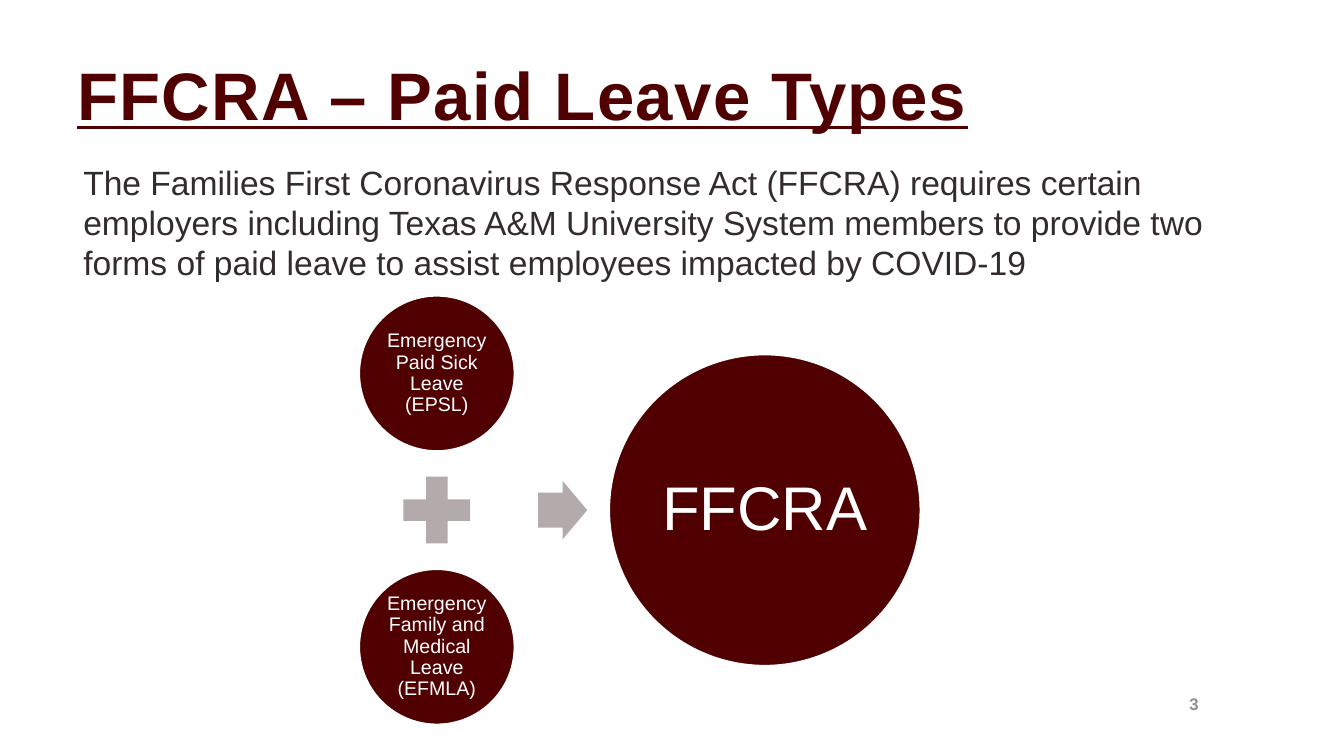
from dataclasses import dataclass

from pptx import Presentation
from pptx.dml.color import RGBColor
from pptx.enum.shapes import MSO_SHAPE as Shape
from pptx.enum.text import MSO_ANCHOR as Anchor, PP_ALIGN as Align
from pptx.util import Cm, Pt


@dataclass(frozen=True)
class Theme:
    font: str = "Arial"
    maroon: str = "500000"
    ink: str = "332C2C"
    sign: str = "B3ABAB"
    muted: str = "908F8F"
    white: str = "FFFFFF"
    title: int = 48
    body: int = 24
    total: int = 44
    leave: int = 14
    number: int = 12


THEME = Theme()


def write(tf, text, size, color, bold=False, underline=False, align=Align.LEFT,
          anchor=Anchor.TOP, line=None, spacing=0, indent=0.0, inset=(0.25, 0.13)):
    """Fill a text frame with one formatted paragraph; indent and inset are in cm."""
    tf.word_wrap = True
    tf.vertical_anchor = anchor
    tf.margin_left = tf.margin_right = Cm(inset[0])
    tf.margin_top = tf.margin_bottom = Cm(inset[1])
    p = tf.paragraphs[0]
    p.alignment = align
    if line:
        p.line_spacing = line
    if indent:
        p._p.get_or_add_pPr().set("marL", str(Cm(indent)))
    r = p.add_run()
    r.text = text
    r.font.name, r.font.size = THEME.font, Pt(size)
    r.font.bold, r.font.underline = bold, underline
    r.font.color.rgb = RGBColor.from_string(color)
    if spacing:
        r._r.get_or_add_rPr().set("spc", str(spacing * 100))


def add_text(slide, box, text, **fmt):
    sp = slide.shapes.add_textbox(*map(Cm, box))
    write(sp.text_frame, text, **fmt)


def add_solid(slide, kind, box, color):
    sp = slide.shapes.add_shape(kind, *map(Cm, box))
    sp.shadow.inherit = False
    sp.fill.solid()
    sp.fill.fore_color.rgb = RGBColor.from_string(color)
    sp.line.fill.background()
    return sp


def add_circle(slide, left, top, size, text, font_size, inset):
    sp = add_solid(slide, Shape.OVAL, (left, top, size, size), THEME.maroon)
    sp.line.color.rgb = RGBColor.from_string(THEME.white)
    sp.line.width = Pt(2)
    write(sp.text_frame, text, size=font_size, color=THEME.white, align=Align.CENTER,
          anchor=Anchor.MIDDLE, line=0.9, inset=(inset, inset))


def add_sum_diagram(slide, box, leaves, total):
    """Stack two leaves around a plus sign, with an arrow to their total on the right."""
    left, top, width, height = box
    small, big, plus = 3.94, 7.87, 2.29
    arrow_w, arrow_h, arrow_gap = 1.24, 1.47, 0.58
    middle = top + height / 2

    for y, text in zip((top, top + height - small), leaves):
        add_circle(slide, left, y, small, text, THEME.leave, 0.05)
    add_solid(slide, Shape.MATH_PLUS,
              (left + (small - plus) / 2, middle - plus / 2, plus, plus), THEME.sign)
    arrow = add_solid(slide, Shape.RIGHT_ARROW,
                      (left + small + arrow_gap, middle - arrow_h / 2, arrow_w, arrow_h),
                      THEME.sign)
    arrow.adjustments[0], arrow.adjustments[1] = 0.6, 0.5
    add_circle(slide, left + width - big, middle - big / 2, big, total, THEME.total, 0.15)


def add_leave_types_slide(prs):
    slide = prs.slides.add_slide(prs.slide_layouts[6])
    add_text(slide, (1.7, 0.76, 31.62, 3.18), "FFCRA – Paid Leave Types",
             size=THEME.title, color=THEME.maroon, bold=True, underline=True,
             anchor=Anchor.MIDDLE, spacing=1)
    add_text(slide, (1.7, 3.94, 30.48, 3.86),
             "The Families First Coronavirus Response Act (FFCRA) requires certain "
             "employers including Texas A&M University System members to provide two "
             "forms of paid leave to assist employees impacted by COVID-19",
             size=THEME.body, color=THEME.ink, indent=0.15)
    add_sum_diagram(slide, (9.04, 7.44, 14.17, 10.83),
                    ("Emergency Paid Sick Leave (EPSL)",
                     "Emergency Family and Medical Leave (EFMLA)"), "FFCRA")
    add_text(slide, (22.56, 17.42, 7.9, 0.64), "3", size=THEME.number, color=THEME.muted,
             bold=True, align=Align.RIGHT, anchor=Anchor.MIDDLE)


def main():
    prs = Presentation()
    prs.slide_width, prs.slide_height = Cm(33.87), Cm(19.05)
    add_leave_types_slide(prs)
    prs.save("out.pptx")


if __name__ == "__main__":
    main()
